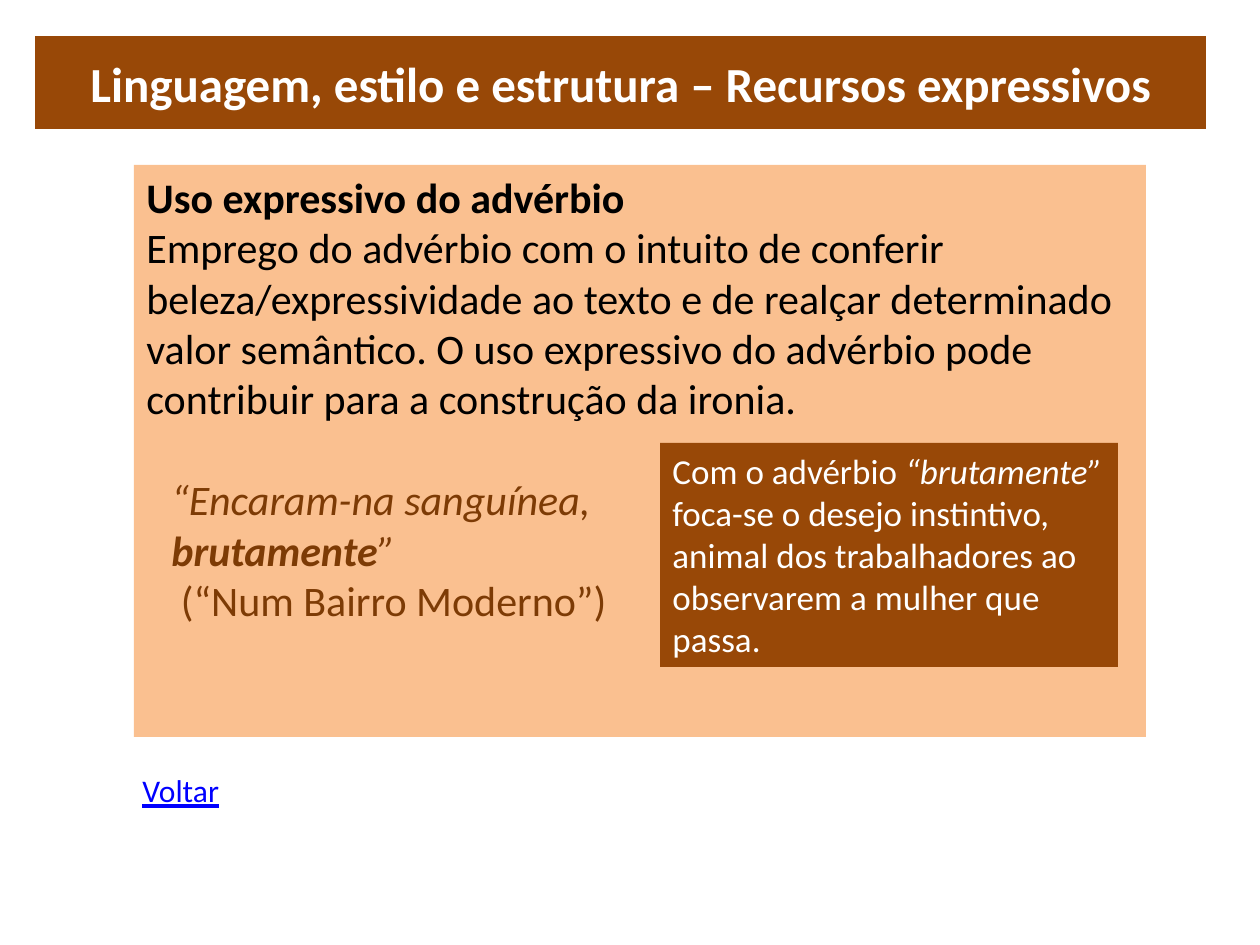
import pptx
import pptx.util
import pptx.dml.color
import pptx.enum.shapes
import pptx.enum.text
import pptx.oxml
import pptx.oxml.ns

PX = 914400 / 126
THEME = {
    "font": "Calibri",
    "brown": "984807", "peach": "FAC090", "quote": "7D3B05",
    "white": "FFFFFF", "black": "000000", "link": "0000FF",
    "title": 28, "body": 24, "note": 20, "small": 18,
}
QUOTE_INDENT = 25
QUOTE_GAP = 29

TITLE = {
    "box": (35, 36, 1171, 93), "fill": "brown", "size": "title", "color": "white",
    "paragraphs": [{"runs": [("Linguagem, estilo e estrutura – Recursos expressivos", {"bold": True})]}],
}
BOXES = [
    {"box": (134, 165, 1012, 572), "fill": "peach", "size": "body", "color": "black",
     "paragraphs": [
         {"runs": [("Uso expressivo do advérbio", {"bold": True})]},
         {"runs": [("Emprego do advérbio com o intuito de conferir beleza/expressividade ao texto "
                    "e de realçar determinado valor semântico. O uso expressivo do advérbio pode "
                    "contribuir para a construção da ironia.", {})]},
         {"runs": [("“Encaram-na sanguínea,", {"italic": True})],
          "color": "quote", "indent": QUOTE_INDENT, "before": QUOTE_GAP},
         {"runs": [("brutamente", {"bold": True, "italic": True}), ("”", {"italic": True})],
          "color": "quote", "indent": QUOTE_INDENT},
         {"runs": [(" (“Num Bairro Moderno”)", {})],
          "color": "quote", "indent": QUOTE_INDENT},
     ]},
    {"box": (660, 443, 458, 224), "fill": "brown", "size": "note", "color": "white",
     "paragraphs": [{"runs": [
         ("Com o advérbio ", {}),
         ("“brutamente” ", {"italic": True}),
         ("foca-se o desejo instintivo, animal dos trabalhadores ao observarem "
          "a mulher que passa.", {}),
     ]}]},
    {"box": (130, 765, 218, 50), "fill": None, "size": "small", "color": "link",
     "paragraphs": [{"runs": [("Voltar", {"underline": True})]}]},
]


def px(n):
    return round(n * PX)


def rgb(name):
    return pptx.dml.color.RGBColor.from_string(THEME[name])


def place(sp, box):
    for name, n in zip(("left", "top", "width", "height"), box):
        setattr(sp, name, px(n))


def paint(sp, color):
    sp.fill.solid()
    sp.fill.fore_color.rgb = rgb(color)
    sp.line.fill.background()


def write(sp, item, align, anchor):
    tf = sp.text_frame
    settings = {"word_wrap": True, "auto_size": pptx.enum.text.MSO_AUTO_SIZE.NONE,
                "vertical_anchor": anchor}
    for name, value in settings.items():
        setattr(tf, name, value)
    for i, para in enumerate(item["paragraphs"]):
        p = tf.add_paragraph() if i else tf.paragraphs[0]
        p.alignment = align
        p.space_before = pptx.util.Pt(para.get("before", 0))
        if "indent" in para:
            p._p.get_or_add_pPr().set("marL", str(px(para["indent"])))
        for text, style in para["runs"]:
            r = p.add_run()
            r.text = text
            font = {"name": THEME["font"], "size": pptx.util.Pt(THEME[item["size"]]),
                    "bold": False, "italic": False, **style}
            for name, value in font.items():
                setattr(r.font, name, value)
            r.font.color.rgb = rgb(para.get("color", item["color"]))


def add_title(s):
    sp = s.shapes.title
    place(sp, TITLE["box"])
    sp._element.spPr.append(pptx.oxml.parse_xml(
        f'<a:prstGeom {pptx.oxml.ns.nsdecls("a")} prst="roundRect"><a:avLst/></a:prstGeom>'))
    paint(sp, TITLE["fill"])
    write(sp, TITLE, pptx.enum.text.PP_ALIGN.CENTER, pptx.enum.text.MSO_ANCHOR.MIDDLE)


def add_box(s, item):
    box = [px(n) for n in item["box"]]
    if item["fill"]:
        sp = s.shapes.add_shape(pptx.enum.shapes.MSO_SHAPE.RECTANGLE, *box)
        sp.shadow.inherit = False
        paint(sp, item["fill"])
    else:
        sp = s.shapes.add_textbox(*box)
    write(sp, item, pptx.enum.text.PP_ALIGN.LEFT, pptx.enum.text.MSO_ANCHOR.TOP)


def main():
    prs = pptx.Presentation()
    prs.slide_width, prs.slide_height = px(1260), px(945)
    s = prs.slides.add_slide(prs.slide_layouts[5])
    add_title(s)
    for item in BOXES:
        add_box(s, item)
    prs.save("out.pptx")


if __name__ == "__main__":
    main()
